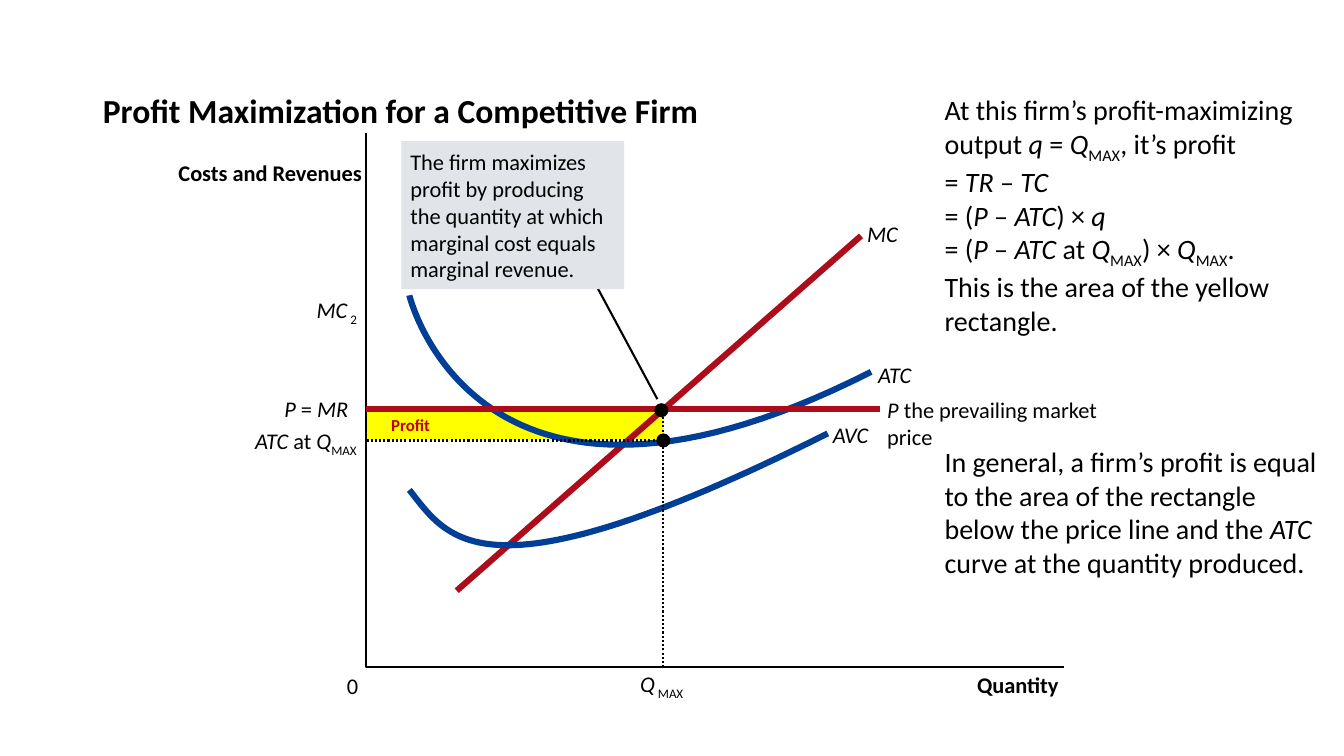
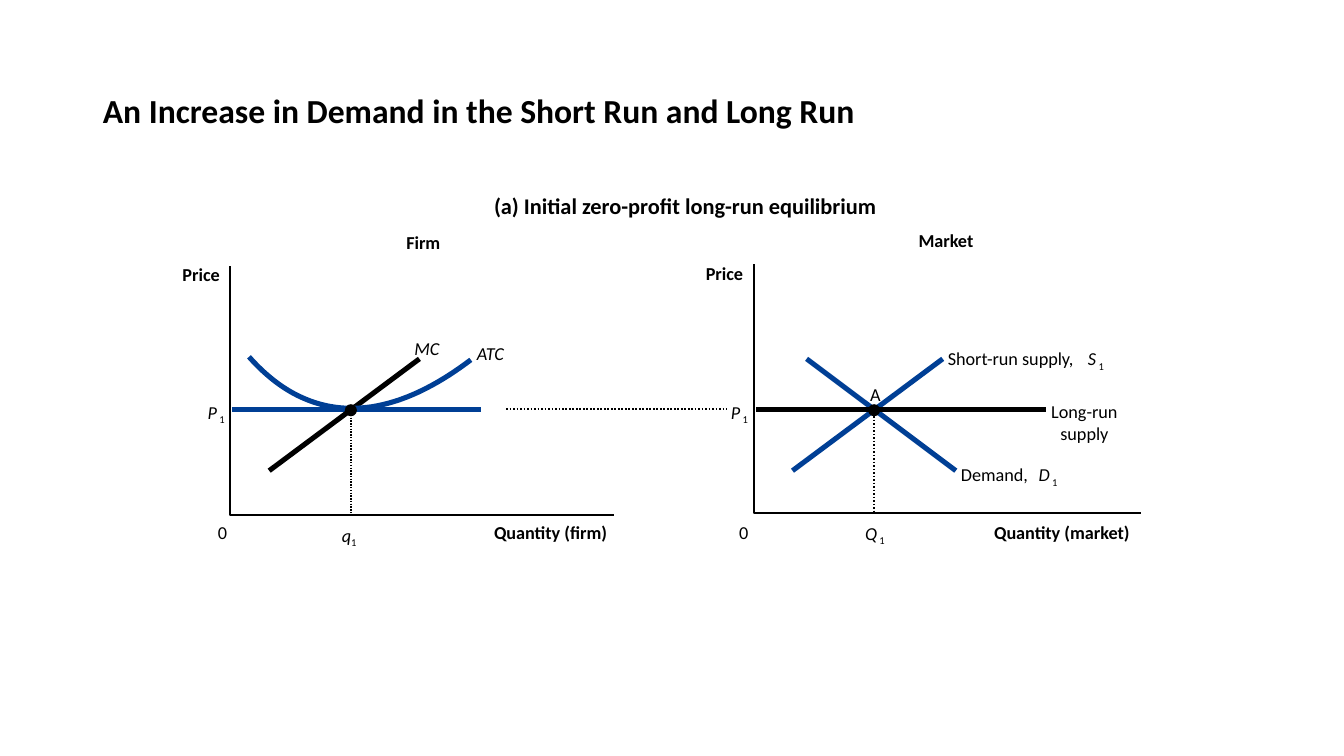
from lxml import etree
from pptx import Presentation, util as u
from pptx.dml.color import RGBColor
from pptx.enum import dml, shapes, text
from pptx.oxml.ns import qn

COLORS = {
    "ink": "000000",
    "curve": "003F95",
    "price": "AD0D1B",
    "profit": "C00000",
    "profit_area": "FFFF00",
    "callout": "E1E5E9",
}


class Deck:
    """Hold the shared style and the current slide, and draw each kind of element."""

    font = "Calibri"
    title_layout = 5
    line_height = 1.22 / 72

    def __init__(self):
        self.presentation = Presentation()
        self.presentation.slide_width = u.Inches(13.33)
        self.presentation.slide_height = u.Inches(7.5)
        self.slide = None

    def color(self, name):
        return RGBColor.from_string(COLORS[name])

    def style_font(self, font, size, color, bold):
        font.name = self.font
        font.size = u.Pt(size)
        font.bold = bold
        font.color.rgb = self.color(color)

    def set_text(self, frame, lines, size, color="ink", bold=False, align="LEFT", insets=(0, 0, 0, 0)):
        frame.margin_left, frame.margin_top, frame.margin_right, frame.margin_bottom = map(u.Inches, insets)
        for index, line in enumerate(lines):
            paragraph = frame.paragraphs[0] if index == 0 else frame.add_paragraph()
            paragraph.alignment = getattr(text.PP_ALIGN, align)
            self.style_font(paragraph.font, size, color, bold)
            for italic, part in enumerate(line.split("*")):
                for lowered, piece in enumerate(part.split("_")):
                    if piece:
                        run = paragraph.add_run()
                        run.text = piece
                        self.style_font(run.font, size, color, bold)
                        run.font.italic = italic % 2 == 1
                        if lowered % 2:
                            run.font._element.set("baseline", "-25000")

    def add_slide(self, title):
        layout = self.presentation.slide_layouts[self.title_layout]
        self.slide = self.presentation.slides.add_slide(layout)
        shape = self.slide.shapes.title
        shape.left, shape.top, shape.width, shape.height = map(u.Inches, (0.92, 0.4, 11.5, 1.45))
        frame = shape.text_frame
        frame.vertical_anchor = text.MSO_ANCHOR.MIDDLE
        frame.auto_size = text.MSO_AUTO_SIZE.NONE
        self.set_text(frame, [title], 24, bold=True, insets=(0.1, 0.05, 0.1, 0.05))
        frame.paragraphs[0].line_spacing = 0.8

    def label(self, left, top, width, *lines, size=16, wrap=False, **style):
        height = len(lines) * size * self.line_height
        box = self.slide.shapes.add_textbox(*map(u.Inches, (left, top, width, height)))
        frame = box.text_frame
        frame.word_wrap = wrap
        frame.auto_size = text.MSO_AUTO_SIZE.SHAPE_TO_FIT_TEXT
        self.set_text(frame, lines, size, **style)

    def shape(self, kind, left, top, width, height, color):
        preset = getattr(shapes.MSO_SHAPE, kind)
        shape = self.slide.shapes.add_shape(preset, *map(u.Inches, (left, top, width, height)))
        shape.shadow.inherit = False
        shape.fill.solid()
        shape.fill.fore_color.rgb = self.color(color)
        shape.line.fill.background()
        return shape

    def dot(self, x, y, size):
        self.shape("OVAL", x - size / 2, y - size / 2, size, size, "ink")

    def style_line(self, line, color, weight, dotted):
        line.color.rgb = self.color(color)
        line.width = u.Pt(weight)
        if dotted:
            line.dash_style = dml.MSO_LINE.ROUND_DOT

    def line(self, start, end, color="ink", weight=1.25, dotted=False):
        ends = map(u.Inches, (*start, *end))
        connector = self.slide.shapes.add_connector(shapes.MSO_CONNECTOR.STRAIGHT, *ends)
        self.style_line(connector.line, color, weight, dotted)
        etree.SubElement(connector._element.spPr, qn("a:effectLst"))

    def polyline(self, points, color="ink", weight=1.25, dotted=False):
        start, *rest = [(u.Inches(x), u.Inches(y)) for x, y in points]
        builder = self.slide.shapes.build_freeform(*start)
        builder.add_line_segments(rest, close=False)
        shape = builder.convert_to_shape()
        shape.shadow.inherit = False
        shape.fill.background()
        self.style_line(shape.line, color, weight, dotted)

    def curve(self, controls, weight, steps=60):
        points = []
        for step in range(steps + 1):
            t = step / steps
            weights = ((1 - t) ** 3, 3 * t * (1 - t) ** 2, 3 * t ** 2 * (1 - t), t ** 3)
            points.append([sum(w * c[axis] for w, c in zip(weights, controls)) for axis in (0, 1)])
        self.polyline(points, "curve", weight)

    def axes(self, left, top, right, bottom, weight=1.25):
        self.polyline([(left, top), (left, bottom), (right, bottom)], weight=weight)


def build_profit_slide(deck):
    left, bottom = 3.63, 6.62
    quantity, price, cost = 6.58, 4.06, 4.37
    thick = 4.38

    deck.add_slide("Profit Maximization for a Competitive Firm")
    deck.shape("RECTANGLE", left, price, quantity - left, 0.3, "profit_area")
    deck.label(3.88, 4.11, 0.4, "Profit", size=12, color="profit", bold=True)
    deck.axes(left, 1.32, 10.55, bottom, 1.5)
    deck.line((4.53, 5.86), (8.54, 2.34), "price", thick)
    deck.curve([(4.06, 2.93), (4.06, 2.93), (4.72, 5.68), (8.64, 3.69)], thick)
    deck.curve([(4.06, 4.86), (4.45, 5.35), (4.78, 6.02), (8.21, 4.3)], thick)

    deck.line((6.52, 3.96), (5.88, 2.77), weight=1.5)
    callout = deck.shape("RECTANGLE", 3.98, 1.4, 2.21, 1.47, "callout")
    callout.text_frame.word_wrap = True
    callout.text_frame.vertical_anchor = text.MSO_ANCHOR.TOP
    message = "The firm maximizes profit by producing the quantity at which marginal cost equals marginal revenue."
    deck.set_text(callout.text_frame, [message], 16, insets=(0.09, 0.07, 0.14, 0))

    for level in (price, cost):
        deck.polyline([(quantity, bottom), (quantity, level), (left, level)], weight=1.5, dotted=True)
    deck.line((left, price), (8.73, price), "price", thick)
    deck.dot(6.56, 4.07, 0.14)
    deck.dot(quantity, cost, 0.14)

    for left, top, width, caption in (
        (9.69, 6.66, 0.82, "Quantity"),
        (1.77, 1.58, 1.84, "Costs and Revenues"),
    ):
        deck.label(left, top, width, caption, bold=True)
    for left, top, width, caption in (
        (3.44, 6.67, 0.11, "0"),
        (8.6, 2.18, 0.31, "*MC*"),
        (8.71, 3.58, 0.33, "*ATC*"),
        (8.26, 4.18, 0.36, "*AVC*"),
        (3.14, 2.94, 0.41, "*MC*_ 2_"),
        (6.35, 6.65, 0.44, "*Q*_ MAX_"),
        (2.82, 3.92, 0.65, "*P* = *MR*"),
        (8.8, 3.93, 2.57, "*P* the prevailing market price"),
        (2.53, 4.24, 1.06, "*ATC* at *Q*_MAX_"),
    ):
        deck.label(left, top, width, caption)

    notes = (
        (0.87, (
            "At this firm’s profit-maximizing output *q* = *Q*_MAX_, it’s profit",
            "= *TR* – *TC*",
            "= (*P* – *ATC*) × *q*",
            "= (*P* – *ATC* at *Q*_MAX_) × *Q*_MAX_.",
            "This is the area of the yellow rectangle.",
        )),
        (4.36, (
            "In general, a firm’s profit is equal to the area of the rectangle below "
            "the price line and the *ATC* curve at the quantity produced.",
        )),
    )
    for top, lines in notes:
        deck.label(9.27, top, 3.97, *lines, size=20, wrap=True, insets=(0.1, 0.05, 0.1, 0.05))


def build_demand_slide(deck):
    price, low, high = 4.06, 4.67, 3.56
    thick = 3.63

    deck.add_slide("An Increase in Demand in the Short Run and Long Run")
    deck.label(4.9, 1.91, 3.84, "(a) Initial zero-profit long-run equilibrium", bold=True)
    deck.axes(7.48, 2.62, 11.32, 5.09)
    deck.axes(2.28, 2.64, 6.09, 5.11)

    for start, end, color in (
        ((9.48, low), (8, high), "curve"),
        ((7.86, low), (9.35, high), "curve"),
        ((2.3, price), (4.77, price), "curve"),
        ((7.5, price), (10.37, price), "ink"),
        ((2.67, low), (4.16, high), "ink"),
    ):
        deck.line(start, end, color, thick)
    deck.curve([(2.47, 3.54), (2.85, 3.97), (3.55, 4.42), (4.67, 3.57)], thick)

    deck.line((5.02, price), (7.21, price), dotted=True)
    for quantity, bottom, weight in ((3.48, 5.11, 1), (8.67, 5.07, 1.25)):
        deck.line((quantity, price), (quantity, bottom), weight=weight, dotted=True)
        deck.dot(quantity, price + 0.01, 0.12)

    for left, top, width, caption in (
        (4.03, 2.29, 0.34, "Firm"),
        (9.11, 2.28, 0.55, "Market"),
        (1.81, 2.61, 0.38, "Price"),
        (7, 2.6, 0.38, "Price"),
        (4.9, 5.17, 1.14, "Quantity (firm)"),
        (9.86, 5.17, 1.36, "Quantity (market)"),
    ):
        deck.label(left, top, width, caption, size=13, bold=True)
    for left, top, width, caption in (
        (2.16, 5.17, 0.09, "0"),
        (7.33, 5.17, 0.09, "0"),
        (2.06, 3.98, 0.18, "*P*_ 1_"),
        (7.25, 3.98, 0.18, "*P*_ 1_"),
        (3.39, 5.2, 0.16, "*q*_1_"),
        (8.58, 5.18, 0.2, "*Q*_ 1_"),
        (4.11, 3.35, 0.25, "*MC*"),
        (4.73, 3.4, 0.27, "*ATC*"),
        (8.63, 3.8, 0.11, "A"),
        (9.4, 3.45, 1.32, "Short-run supply,"),
        (10.79, 3.45, 0.18, "*S*_ 1_"),
        (9.53, 4.6, 0.72, "Demand,"),
        (10.3, 4.6, 0.19, "*D*_ 1_"),
    ):
        deck.label(left, top, width, caption, size=13)
    deck.label(10.42, 3.97, 0.67, "Long-run", "supply", size=13, align="CENTER")


def main():
    deck = Deck()
    build_profit_slide(deck)
    build_demand_slide(deck)
    deck.presentation.save("out.pptx")


if __name__ == "__main__":
    main()
